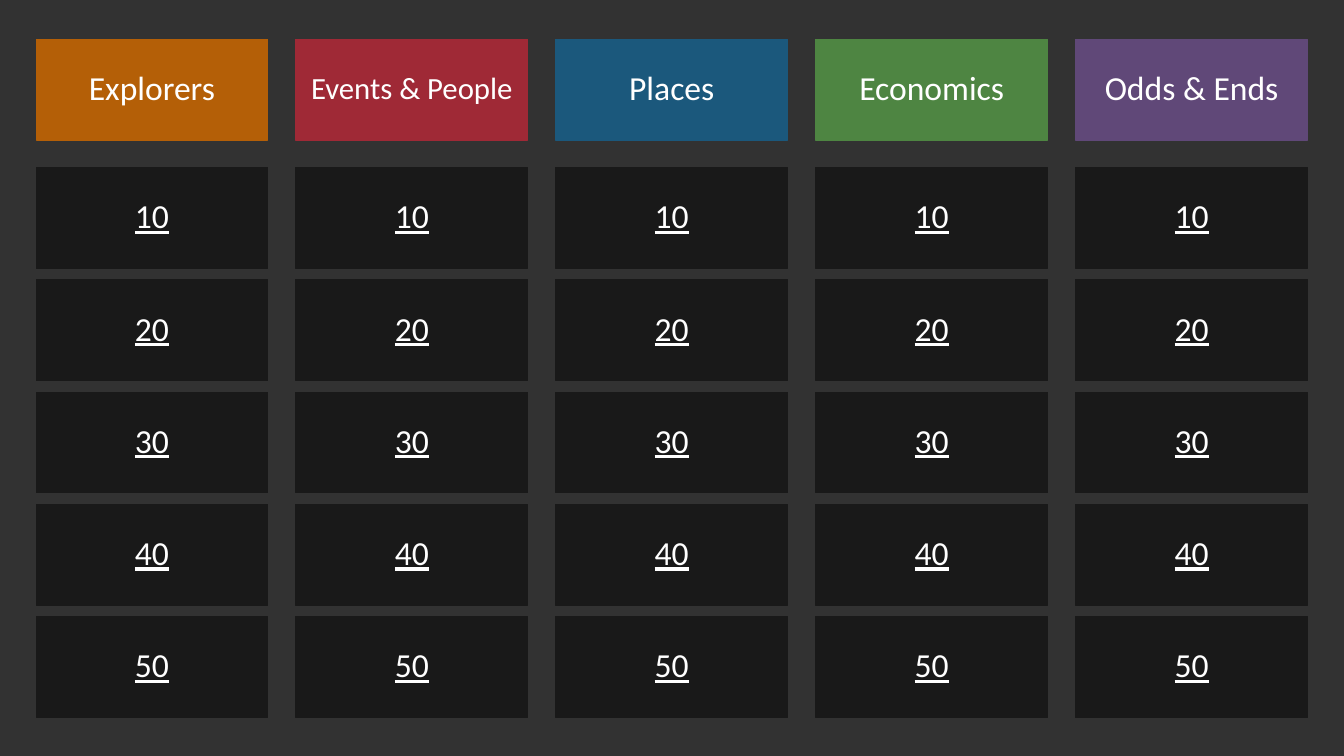
"""Builds a quiz board with five categories and five point values each."""
import pptx
import pptx.dml.color
import pptx.enum.shapes
import pptx.enum.text
import pptx.util

Cm = pptx.util.Cm
Pt = pptx.util.Pt

CATEGORIES = [
    ("Explorers", "B45F07", 24),
    ("Events & People", "9F2936", 22),
    ("Places", "1B587C", 24),
    ("Economics", "4E8542", 24),
    ("Odds & Ends", "604878", 24),
]
POINTS = [10, 20, 30, 40, 50]

LEFT, COLUMN_STEP = 0.91, 6.55
HEADING_TOP, POINTS_TOP, ROW_STEP = 0.99, 4.22, 2.83


def color(hex_code):
    return pptx.dml.color.RGBColor.from_string(hex_code)


class Board:
    font = "Calibri"
    text_color = "FFFFFF"
    background_color = "323232"
    points_color = "191919"
    tile_width, tile_height = 5.84, 2.54

    def __init__(self, slide):
        self.slide = slide

    def background(self):
        fill = self.slide.background.fill
        fill.solid()
        fill.fore_color.rgb = color(self.background_color)

    def tile(self, left, top, text, fill, size=24, underline=False):
        tile = self.slide.shapes.add_shape(
            pptx.enum.shapes.MSO_SHAPE.RECTANGLE,
            Cm(left), Cm(top), Cm(self.tile_width), Cm(self.tile_height))
        tile.shadow.inherit = False
        tile.fill.solid()
        tile.fill.fore_color.rgb = color(fill)
        tile.line.color.rgb = color(fill)
        tile.line.width = Pt(0.75)

        frame = tile.text_frame
        frame.text = text
        frame.word_wrap = True
        frame.vertical_anchor = pptx.enum.text.MSO_ANCHOR.MIDDLE
        paragraph = frame.paragraphs[0]
        paragraph.alignment = pptx.enum.text.PP_ALIGN.CENTER
        paragraph.line_spacing = 0.9
        font = paragraph.runs[0].font
        font.name = self.font
        font.size = Pt(size)
        font.color.rgb = color(self.text_color)
        if underline:
            font.underline = True

    def category(self, left, name, fill, size):
        self.tile(left, HEADING_TOP, name, fill, size)
        for row, points in enumerate(POINTS):
            self.tile(left, POINTS_TOP + row * ROW_STEP, str(points),
                      self.points_color, underline=True)


def main():
    presentation = pptx.Presentation()
    presentation.slide_width = Cm(33.87)
    presentation.slide_height = Cm(19.05)
    board = Board(presentation.slides.add_slide(presentation.slide_layouts[6]))
    board.background()
    for column, (name, fill, size) in enumerate(CATEGORIES):
        board.category(LEFT + column * COLUMN_STEP, name, fill, size)
    presentation.save("out.pptx")


if __name__ == "__main__":
    main()
